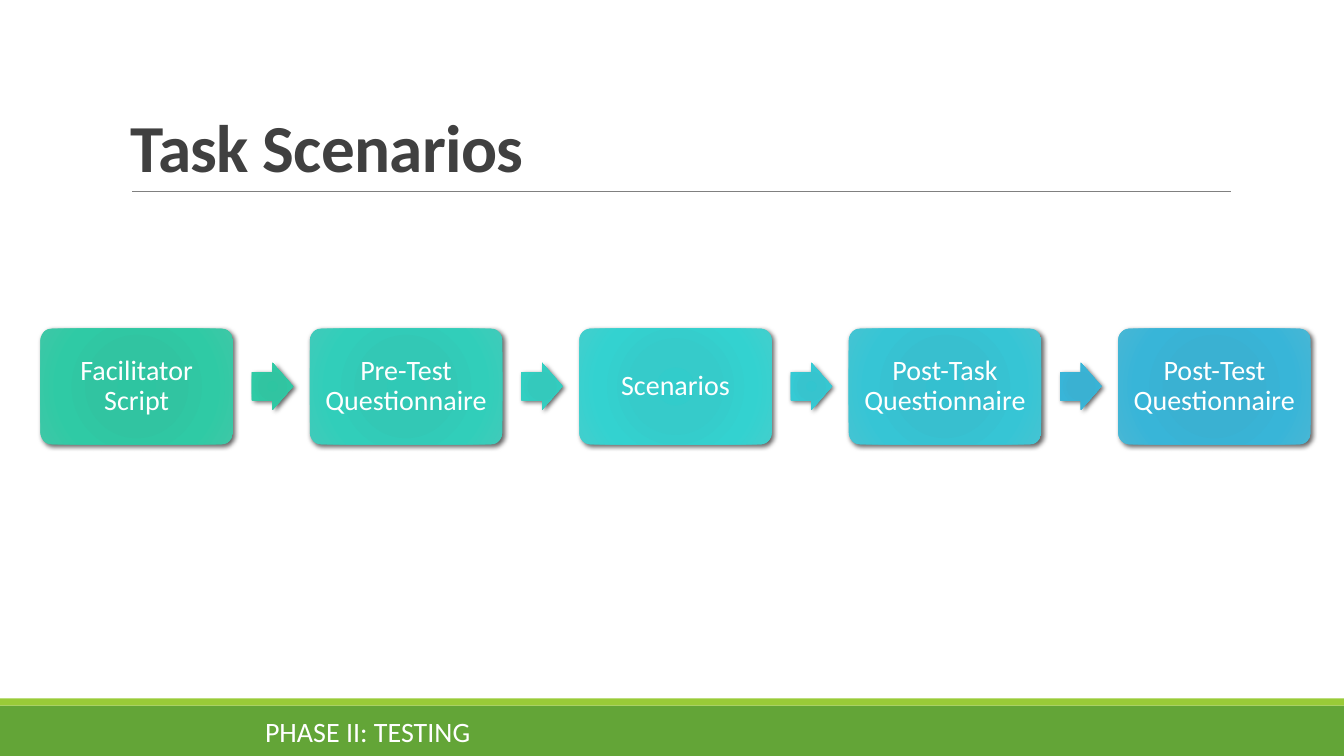
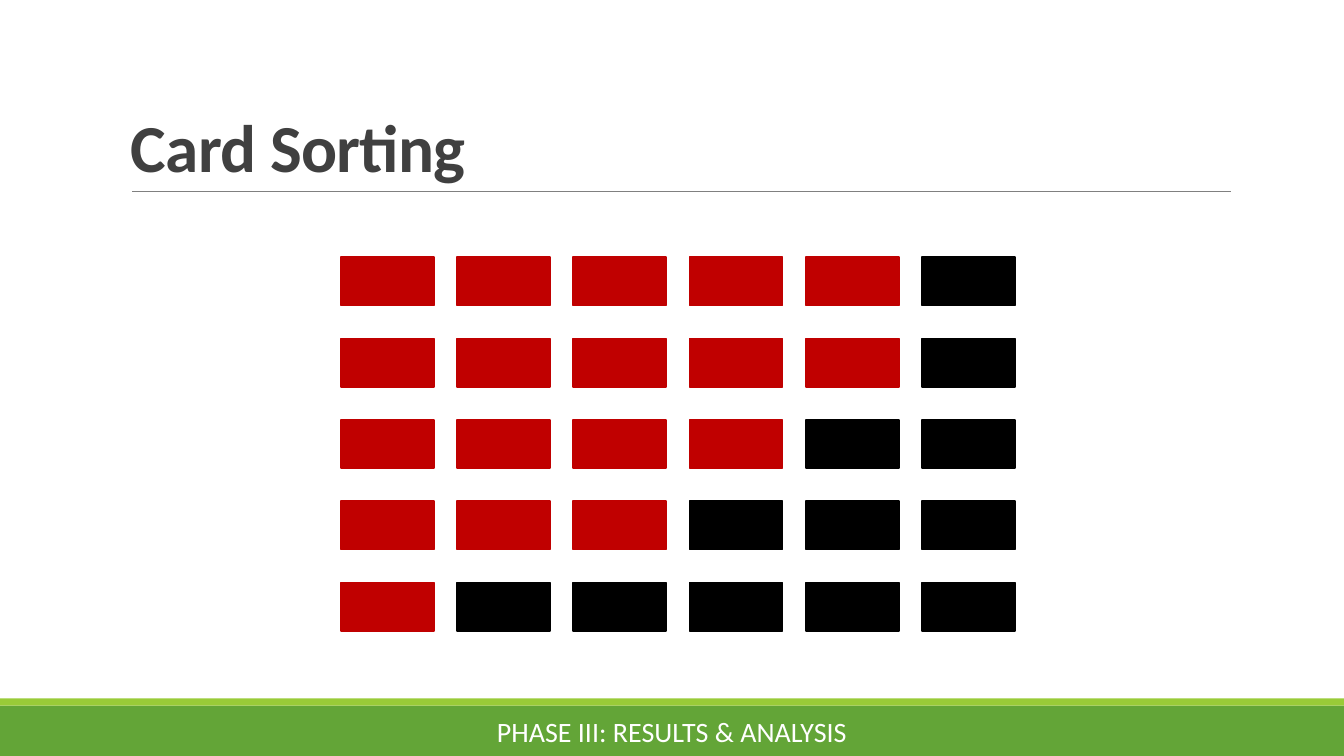
from dataclasses import dataclass

from lxml.etree import SubElement
from pptx import Presentation
from pptx.dml.color import RGBColor
from pptx.enum.shapes import MSO_CONNECTOR as CONN, MSO_SHAPE as SHAPE
from pptx.enum.text import MSO_ANCHOR as ANCHOR, PP_ALIGN as ALIGN
from pptx.oxml.ns import qn
from pptx.shapes.autoshape import Shape
from pptx.slide import Slide
from pptx.util import Cm, Pt

FONT = "Calibri"
GREEN, LIME = "63A537", "99CB38"
WHITE, BLACK, RED = "FFFFFF", "000000", "C00000"
DARK, GREY = "404040", "808080"
SLIDE_W, SLIDE_H = 33.87, 19.05
STOPS = (0, 34, 70, 100)  # gradient positions in percent

Gradient = tuple[str, str, str, str]


@dataclass(frozen=True)
class Box:
    """Position and size in centimetres."""
    left: float
    top: float
    width: float
    height: float

    def lengths(self) -> tuple[Cm, Cm, Cm, Cm]:
        return Cm(self.left), Cm(self.top), Cm(self.width), Cm(self.height)


@dataclass(frozen=True)
class Step:
    text: str
    colors: Gradient


# Process steps and the arrows between them
STEPS = (
    Step("Facilitator Script", ("2EC5A1", "31C4A1", "2FCAA5", "3EC7A6")),
    Step("Pre-Test Questionnaire", ("30C9B6", "33C8B5", "31CEBA", "40CBBA")),
    Step("Scenarios", ("32CCCB", "36CBCA", "33D2D0", "42CFCD")),
    Step("Post-Task Questionnaire", ("34C0D0", "38BFCF", "36C5D5", "45C4D2")),
    Step("Post-Test Questionnaire", ("37B1D3", "3AB1D2", "38B5D8", "48B7D5")),
)
ARROW_COLORS: tuple[Gradient, ...] = (
    STEPS[0].colors,
    ("31CABD", "34C9BC", "32CFC1", "41CCC0"),
    ("33C5CF", "37C4CE", "35CAD4", "44C8D1"),
    STEPS[-1].colors,
)
STEP_PITCH = 6.79

# Cards: number of red ones in each row, the rest are black
RED_COUNTS = (5, 5, 4, 3, 1)
CARD_COLUMNS = 6
CARD_PITCH_X, CARD_PITCH_Y = 2.93, 2.05


def rgb(color: str) -> RGBColor:
    return RGBColor.from_string(color)


def add_shape(slide: Slide, kind: SHAPE, box: Box) -> Shape:
    s = slide.shapes.add_shape(kind, *box.lengths())
    s.shadow.inherit = False
    s.line.fill.background()
    return s


def add_solid(slide: Slide, box: Box, color: str) -> Shape:
    s = add_shape(slide, SHAPE.RECTANGLE, box)
    s.fill.solid()
    s.fill.fore_color.rgb = rgb(color)
    return s


def add_glossy(slide: Slide, kind: SHAPE, box: Box, colors: Gradient) -> Shape:
    """Shape with a radial gradient and a soft shadow."""
    s = add_shape(slide, kind, box)
    s.fill.gradient()
    sp_pr = s._element.spPr

    grad = sp_pr.find(qn("a:gradFill"))
    for child in list(grad):
        grad.remove(child)
    stops = SubElement(grad, qn("a:gsLst"))
    for pos, color in zip(STOPS, colors):
        stop = SubElement(stops, qn("a:gs"), pos=str(pos * 1000))
        SubElement(stop, qn("a:srgbClr"), val=color)
    circle = SubElement(grad, qn("a:path"), path="circle")
    SubElement(circle, qn("a:fillToRect"), {side: "100000" for side in "ltrb"})

    shadow = SubElement(
        sp_pr.find(qn("a:effectLst")), qn("a:outerShdw"),
        blurRad=str(Pt(3.5)), dist=str(Pt(2)), dir="2700000",
        algn="ctr", rotWithShape="0")
    shade = SubElement(shadow, qn("a:srgbClr"), val=BLACK)
    SubElement(shade, qn("a:alpha"), val="60000")
    return s


def set_text(s: Shape, text: str, size: int, color: str, align: ALIGN,
             anchor: ANCHOR, spacing: float = 1.0, bold: bool = False) -> None:
    tf = s.text_frame
    tf.word_wrap = True
    tf.vertical_anchor = anchor
    p = tf.paragraphs[0]
    p.text = text
    p.alignment = align
    p.line_spacing = spacing
    p.font.name = FONT
    p.font.size = Pt(size)
    p.font.bold = bold
    p.font.color.rgb = rgb(color)


def add_slide(prs: Presentation, title: str, footer: str, footer_box: Box,
              footer_align: ALIGN) -> Slide:
    """Slide with the shared bands, title, rule and footer."""
    slide = prs.slides.add_slide(prs.slide_layouts[6])

    # Bottom bands
    add_solid(slide, Box(0, 17.78, SLIDE_W, 1.27), GREEN)
    add_solid(slide, Box(0, 17.6, SLIDE_W, 0.18), LIME)

    # Title and the rule below it
    rule = slide.shapes.add_connector(
        CONN.STRAIGHT, Cm(3.33), Cm(4.83), Cm(31.01), Cm(4.83))
    rule.line.color.rgb = rgb(GREY)
    rule.line.width = Pt(0.5)
    SubElement(rule._element.spPr, qn("a:effectLst"))
    s = slide.shapes.add_textbox(*Box(3.05, 0.79, 27.94, 4.04).lengths())
    set_text(s, title, 48, DARK, ALIGN.LEFT, ANCHOR.BOTTOM, 0.85, bold=True)
    r = s.text_frame.paragraphs[0].runs[0]
    r._r.get_or_add_rPr().set("spc", "-50")

    # Footer
    s = slide.shapes.add_textbox(*footer_box.lengths())
    set_text(s, footer, 20, WHITE, footer_align, ANCHOR.MIDDLE)
    return slide


def add_process(slide: Slide) -> None:
    for i, step in enumerate(STEPS):
        box = Box(1.02 + i * STEP_PITCH, 8.28, 4.85, 2.92)
        s = add_glossy(slide, SHAPE.ROUNDED_RECTANGLE, box, step.colors)
        s.adjustments[0] = 0.1
        set_text(s, step.text, 20, WHITE, ALIGN.CENTER, ANCHOR.MIDDLE, 0.9)
        s.text_frame.margin_left = s.text_frame.margin_right = Cm(0.2)
    for i, colors in enumerate(ARROW_COLORS):
        box = Box(6.35 + i * STEP_PITCH, 9.14, 1.04, 1.19)
        s = add_glossy(slide, SHAPE.RIGHT_ARROW, box, colors)
        s.adjustments[0] = 0.6
        s.adjustments[1] = 0.5


def add_cards(slide: Slide) -> None:
    for row, red_count in enumerate(RED_COUNTS):
        for col in range(CARD_COLUMNS):
            color = RED if col < red_count else BLACK
            box = Box(8.59 + col * CARD_PITCH_X, 6.48 + row * CARD_PITCH_Y,
                      2.34, 1.22)
            s = add_solid(slide, box, color)
            s.line.color.rgb = rgb(color)
            s.line.width = Pt(1.25)


def main() -> None:
    prs = Presentation()
    prs.slide_width, prs.slide_height = Cm(SLIDE_W), Cm(SLIDE_H)

    add_process(add_slide(prs, "Task Scenarios", "PHASE II: TESTING",
                          Box(6.43, 17.93, 17.2, 1.02), ALIGN.LEFT))
    add_cards(add_slide(prs, "Card Sorting", "PHASE III: RESULTS & ANALYSIS",
                        Box(10.24, 17.93, 13.39, 1.02), ALIGN.CENTER))

    prs.save("out.pptx")


if __name__ == "__main__":
    main()
